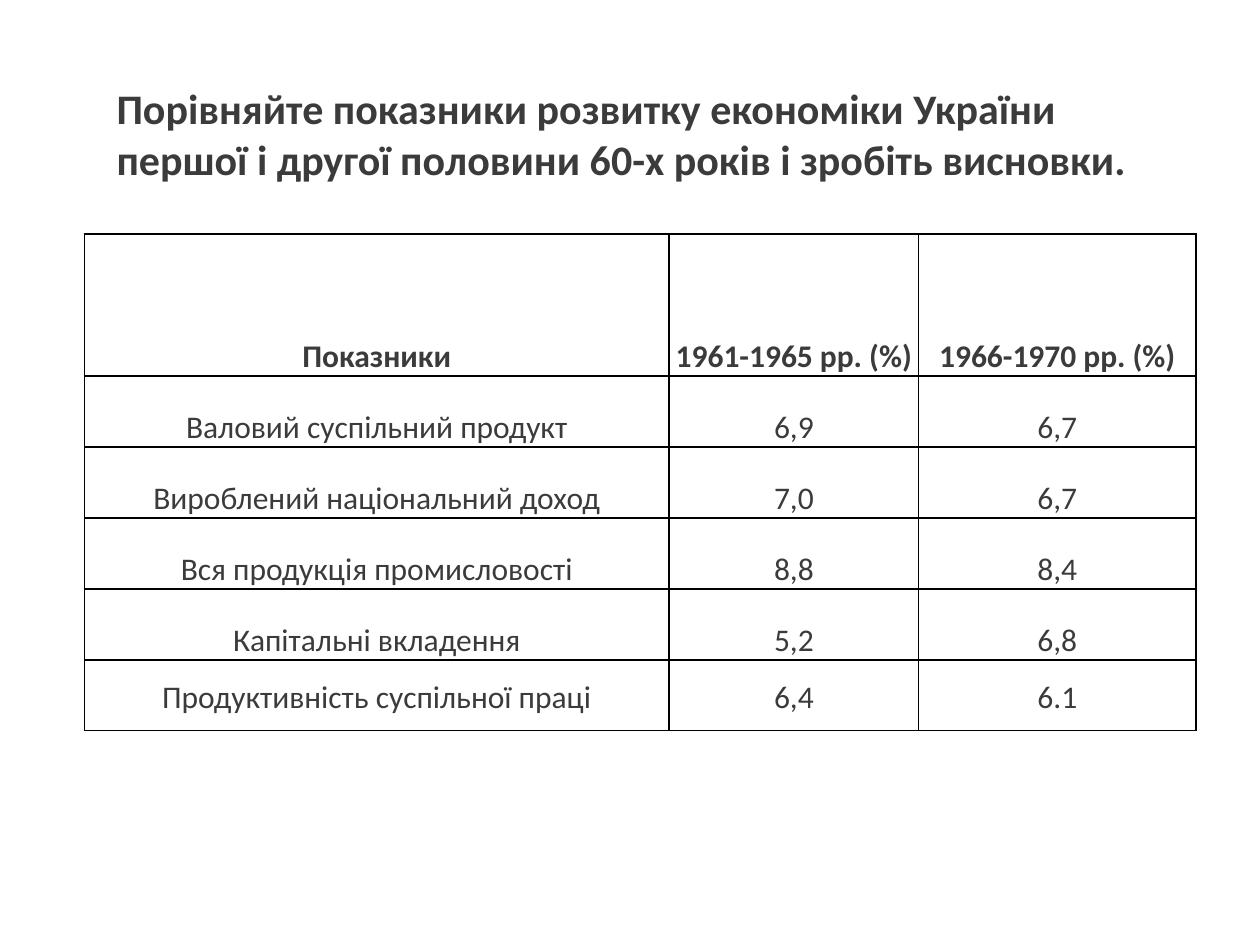
from lxml.etree import SubElement
from pptx import Presentation
from pptx.dml.color import RGBColor
from pptx.enum.text import MSO_ANCHOR as ANCHOR, PP_ALIGN as ALIGN
from pptx.oxml.ns import qn
from pptx.util import Cm, Pt

ROWS = [
    ("Показники", "1961-1965 рр. (%)", "1966-1970 рр. (%)"),
    ("Валовий суспільний продукт", "6,9", "6,7"),
    ("Вироблений національний доход", "7,0", "6,7"),
    ("Вся продукція промисловості", "8,8", "8,4"),
    ("Капітальні вкладення", "5,2", "6,8"),
    ("Продуктивність суспільної праці", "6,4", "6.1"),
]
COL_WIDTHS = [11.79, 5.03, 5.59]
ROW_HEIGHT = 1.43


def rgb(value):
    return RGBColor.from_string(value)


class SlideBuilder:
    font, ink, paper, border = "Calibri", "3B3B3B", "FFFFFF", "000000"

    def __init__(self, s):
        self.s = s

    def add_text(self, tf, text, size=18, bold=False, align=ALIGN.LEFT, spacing=1.0):
        p = tf.paragraphs[0]
        p.alignment, p.line_spacing = align, spacing
        r = p.add_run()
        r.text = text
        r.font.name, r.font.size, r.font.bold = self.font, Pt(size), bold
        r.font.color.rgb = rgb(self.ink)

    def title(self, text, x, y, w, h):
        tf = self.s.shapes.add_textbox(Cm(x), Cm(y), Cm(w), Cm(h)).text_frame
        tf.word_wrap = True
        tf.vertical_anchor = ANCHOR.MIDDLE
        self.add_text(tf, text, size=24, bold=True)

    def outline(self, cell):
        """Draw a 1 pt line on all four sides of a cell."""
        tc_pr = cell._tc.get_or_add_tcPr()
        for side in ("lnL", "lnR", "lnT", "lnB"):
            ln = SubElement(tc_pr, qn(f"a:{side}"), w=str(Pt(1)))
            fill = SubElement(ln, qn("a:solidFill"))
            SubElement(fill, qn("a:srgbClr"), val=self.border)

    def table(self, rows, x, y, widths, heights):
        table = self.s.shapes.add_table(
            len(rows), len(widths), Cm(x), Cm(y), Cm(sum(widths)), Cm(sum(heights))
        ).table
        for column, width in zip(table.columns, widths):
            column.width = Cm(width)
        last = len(rows) - 1
        for i, (texts, height) in enumerate(zip(rows, heights)):
            table.rows[i].height = Cm(height)
            for j, text in enumerate(texts):
                cell = table.cell(i, j)
                cell.margin_left = cell.margin_right = 0
                cell.margin_top = cell.margin_bottom = 0
                cell.vertical_anchor = ANCHOR.MIDDLE if i == last else ANCHOR.BOTTOM
                self.outline(cell)
                cell.fill.solid()
                cell.fill.fore_color.rgb = rgb(self.paper)
                self.add_text(cell.text_frame, text, bold=i == 0,
                              align=ALIGN.CENTER, spacing=1.15)


def main():
    prs = Presentation()
    prs.slide_width, prs.slide_height = Cm(25.4), Cm(19.05)
    slide = SlideBuilder(prs.slides.add_slide(prs.slide_layouts[6]))
    slide.title("Порівняйте показники розвитку економіки України першої і другої "
                "половини 60-х років і зробіть висновки.", 2.1, 1.53, 21.9, 2.31)
    heights = [2 * ROW_HEIGHT] + [ROW_HEIGHT] * (len(ROWS) - 1)
    slide.table(ROWS, 1.7, 4.72, COL_WIDTHS, heights)
    prs.save("out.pptx")


if __name__ == "__main__":
    main()
